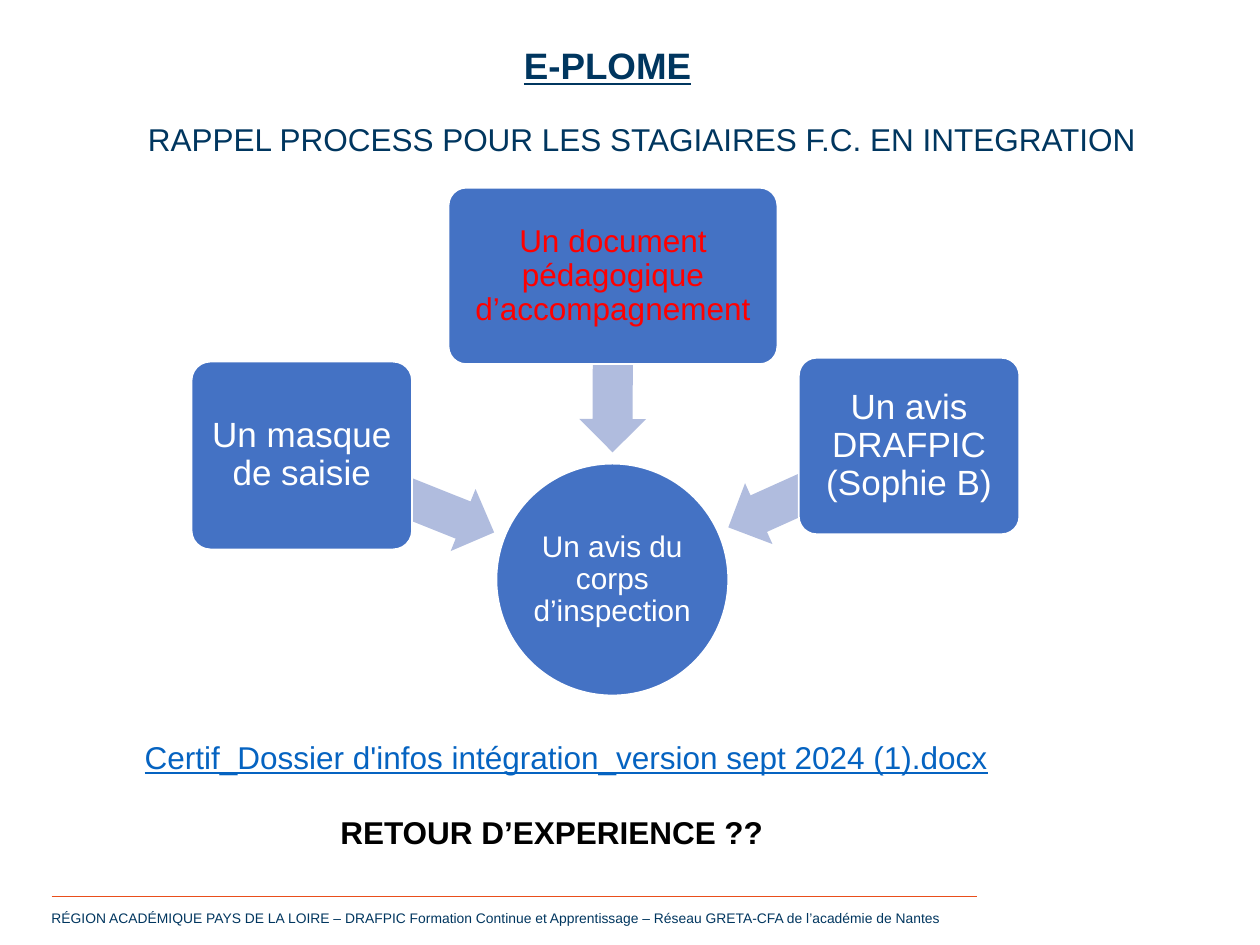
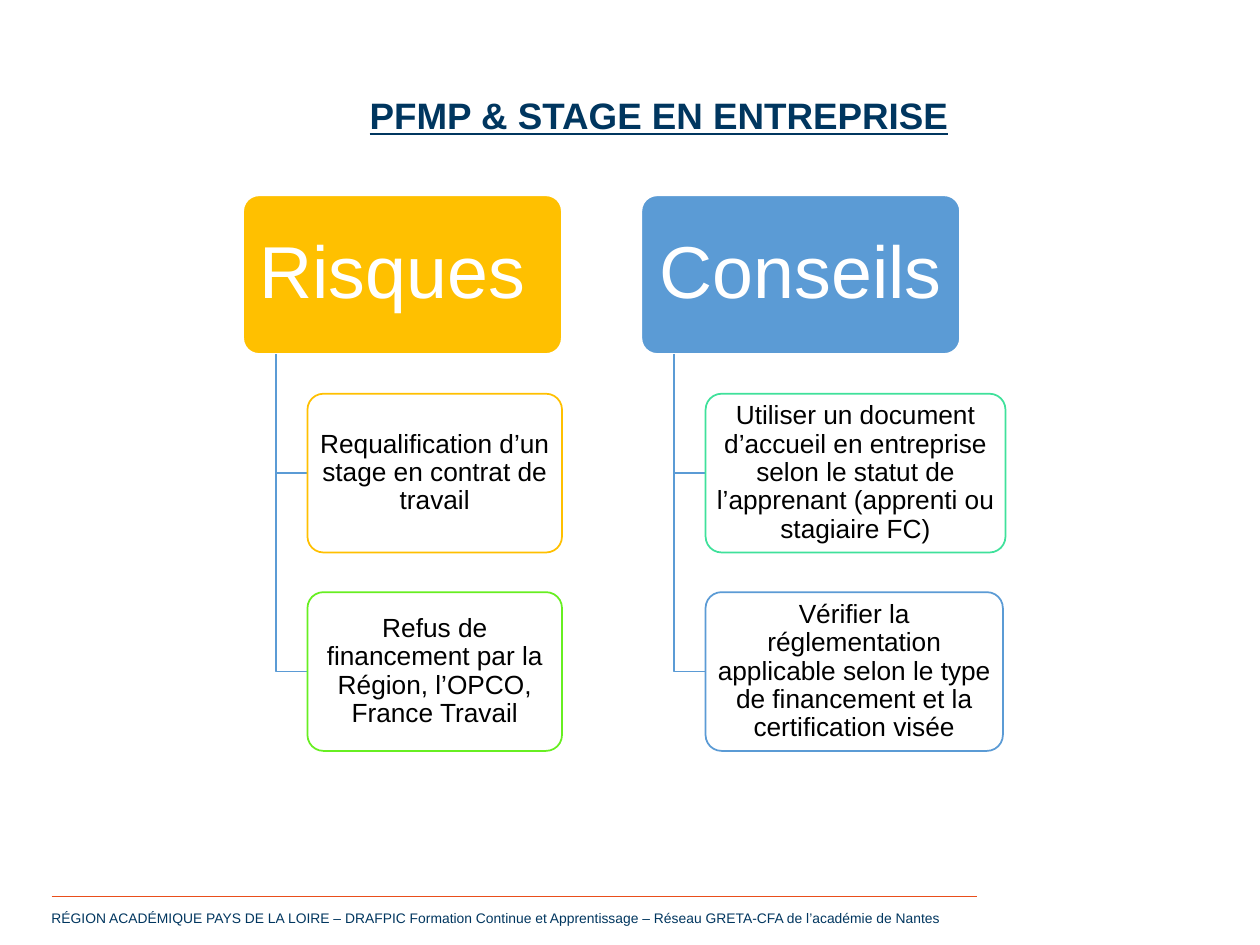
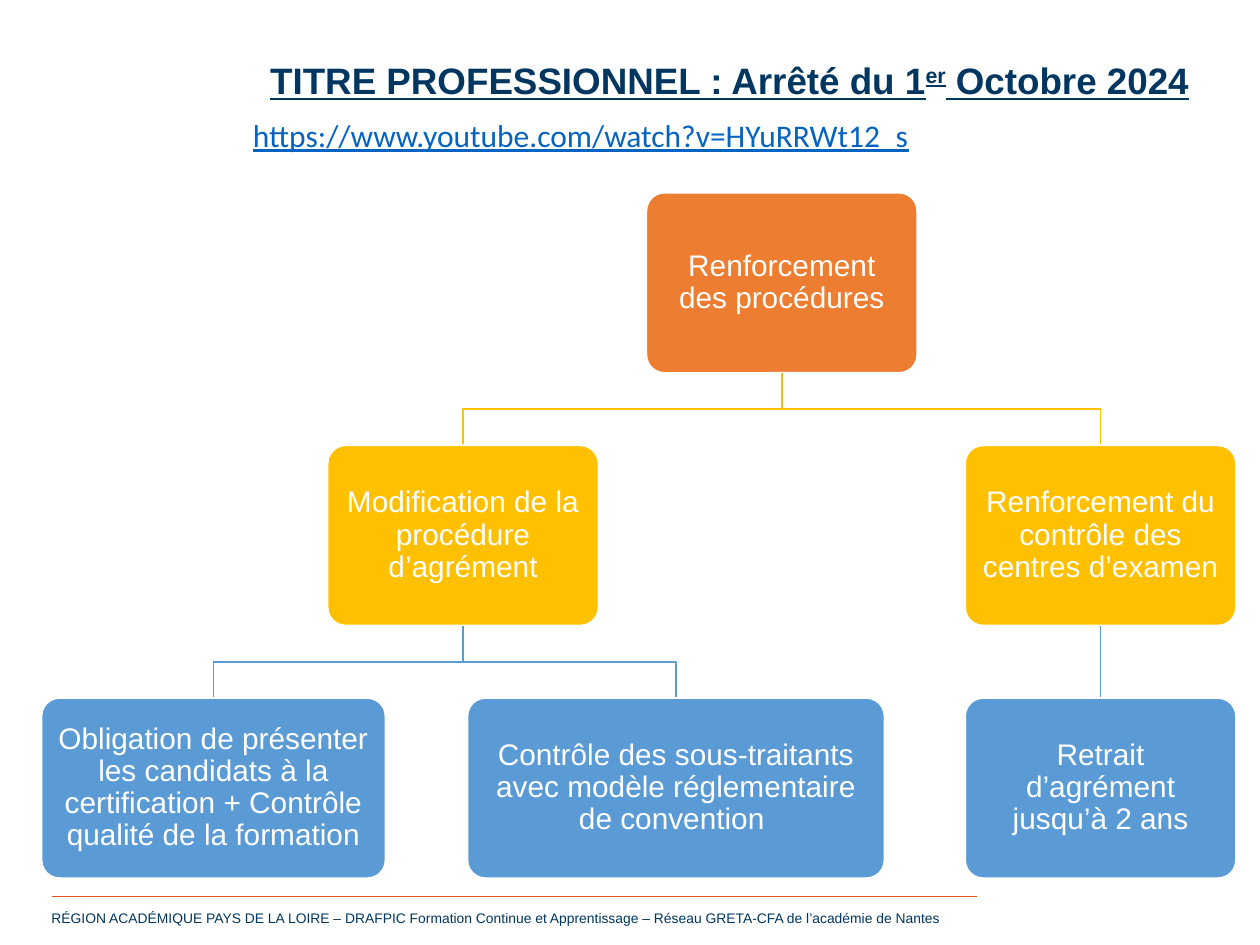
"""Build three slides on training procedures: E-PLOME, placements and professional titles."""
from dataclasses import dataclass
from math import atan2, degrees, hypot

from lxml.etree import SubElement
from pptx import Presentation
from pptx.dml.color import RGBColor
from pptx.enum.shapes import MSO_CONNECTOR, MSO_SHAPE
from pptx.enum.text import MSO_ANCHOR, PP_ALIGN
from pptx.oxml.ns import qn
from pptx.util import Inches, Pt

GRID_COLUMNS, GRID_ROWS = 100, 75
SLIDE_WIDTH, SLIDE_HEIGHT = Inches(10), Inches(7.5)


@dataclass(frozen=True)
class Theme:
    """Colours, fonts and type sizes shared by the slides."""
    navy: str = "00365F"
    footer_rule: str = "E94E1B"
    link: str = "0563C1"
    white: str = "FFFFFF"
    black: str = "000000"
    red: str = "FF0000"
    royal: str = "4472C4"
    pale: str = "B0BCDE"
    blue: str = "5B9BD5"
    gold: str = "FFC000"
    orange: str = "ED7D31"
    lime: str = "67EF21"
    mint: str = "3FE19B"
    font: str = "Arial"
    link_font: str = "Calibri"
    title: float = 21
    body: float = 18
    footer: float = 7.9
    node: float = 17
    process: float = 20
    heading: float = 42
    detail: float = 15


THEME = Theme()


@dataclass(frozen=True)
class Area:
    """A rectangle in grid columns and rows."""
    left: float
    top: float
    width: float
    height: float

    @property
    def centre(self):
        """Return the middle point of the rectangle."""
        return self.left + self.width / 2, self.top + self.height / 2

    @property
    def bottom(self):
        """Return the row of the lower edge."""
        return self.top + self.height

    def lengths(self):
        """Return left, top, width and height in slide units."""
        return (across(self.left), down(self.top),
                across(self.width), down(self.height))


@dataclass(frozen=True)
class Node:
    """A box of the procedure tree with the boxes below it."""
    text: str
    left: float
    width: float
    children: tuple = ()


def across(columns):
    """Convert grid columns to slide units."""
    return round(SLIDE_WIDTH * columns / GRID_COLUMNS)


def down(rows):
    """Convert grid rows to slide units."""
    return round(SLIDE_HEIGHT * rows / GRID_ROWS)


def colour(code):
    """Turn a hexadecimal code into a colour."""
    return RGBColor.from_string(code)


def style_run(run, size, code, bold=False, underline=False, font=THEME.font):
    """Set the character format of a run."""
    run.font.name, run.font.size = font, Pt(size)
    run.font.bold, run.font.underline = bold, underline
    run.font.color.rgb = colour(code)


def style_line(line, code, width=1):
    """Set the colour and width of an outline."""
    line.color.rgb = colour(code)
    line.width = Pt(width)


def add_text(slide, area, text, size, code, align=PP_ALIGN.LEFT, **style):
    """Add a one-paragraph text box and return its paragraph."""
    text_frame = slide.shapes.add_textbox(*area.lengths()).text_frame
    text_frame.word_wrap = True
    text_frame.text = text
    paragraph = text_frame.paragraphs[0]
    paragraph.alignment = align
    for run in paragraph.runs:
        style_run(run, size, code, **style)
    return paragraph


def add_title(slide, area, text, align=PP_ALIGN.CENTER):
    """Add the bold underlined slide title."""
    return add_text(slide, area, text, THEME.title, THEME.navy, align,
                    bold=True, underline=True)


def add_line(slide, start, end, code, width=1):
    """Add a straight connector without shadow."""
    connector = slide.shapes.add_connector(
        MSO_CONNECTOR.STRAIGHT, across(start[0]), down(start[1]),
        across(end[0]), down(end[1]))
    style_line(connector.line, code, width)
    SubElement(connector._element.spPr, qn("a:effectLst"))
    return connector


def add_slide(presentation):
    """Add a blank slide with the shared footer."""
    slide = presentation.slides.add_slide(presentation.slide_layouts[6])
    add_text(slide, Area(3.1, 71.7, 74.4, 2.3),
             "RÉGION ACADÉMIQUE PAYS DE LA LOIRE – DRAFPIC Formation Continue et "
             "Apprentissage – Réseau GRETA-CFA de l’académie de Nantes",
             THEME.footer, THEME.navy)
    add_line(slide, (4.1, 71.1), (77.5, 71.1), THEME.footer_rule, 0.25)
    return slide


def add_box(slide, area, text, size, fill, ink=THEME.white, border=THEME.white,
            insets=(0.04, 0.04), kind=MSO_SHAPE.ROUNDED_RECTANGLE):
    """Add a filled shape with centred text."""
    shape = slide.shapes.add_shape(kind, *area.lengths())
    shape.shadow.inherit = False
    if kind == MSO_SHAPE.ROUNDED_RECTANGLE:
        shape.adjustments[0] = 0.1
    shape.fill.solid()
    shape.fill.fore_color.rgb = colour(fill)
    style_line(shape.line, border)
    text_frame = shape.text_frame
    text_frame.word_wrap = True
    text_frame.vertical_anchor = MSO_ANCHOR.MIDDLE
    text_frame.margin_left = text_frame.margin_right = Inches(insets[0])
    text_frame.margin_top = text_frame.margin_bottom = Inches(insets[1])
    text_frame.text = text
    paragraph = text_frame.paragraphs[0]
    paragraph.alignment = PP_ALIGN.CENTER
    paragraph.line_spacing = 0.9
    style_run(paragraph.runs[0], size, ink)
    return shape


def add_bracket(slide, points, code):
    """Add an open angular line through grid points."""
    start, *others = [(across(column), down(row)) for column, row in points]
    builder = slide.shapes.build_freeform(*start)
    builder.add_line_segments(others, close=False)
    shape = builder.convert_to_shape()
    shape.shadow.inherit = False
    shape.fill.background()
    style_line(shape.line, code)


def add_arrow(slide, source, target, gap, thickness=5.3):
    """Add a block arrow from one centre towards another, stopping at a gap."""
    reach_x, reach_y = source[0] - target[0], source[1] - target[1]
    distance = hypot(reach_x, reach_y)
    length = distance - gap
    share = (gap + length / 2) / distance
    middle_x, middle_y = target[0] + reach_x * share, target[1] + reach_y * share
    area = Area(middle_x - length / 2, middle_y - thickness / 2, length, thickness)
    arrow = slide.shapes.add_shape(MSO_SHAPE.LEFT_ARROW, *area.lengths())
    arrow.shadow.inherit = False
    arrow.adjustments[0], arrow.adjustments[1] = 0.6, 0.5
    arrow.rotation = degrees(atan2(reach_y, reach_x)) % 360
    arrow.fill.solid()
    arrow.fill.fore_color.rgb = colour(THEME.pale)
    arrow.line.fill.background()


def build_process_slide(presentation):
    """Build the slide on the integration process."""
    slide = add_slide(presentation)
    add_title(slide, Area(40.6, 2.9, 55.4, 4.5), "E-PLOME", PP_ALIGN.LEFT)
    add_text(slide, Area(10.75, 9, 87.55, 4),
             "RAPPEL PROCESS POUR LES STAGIAIRES F.C. EN INTEGRATION",
             THEME.body, THEME.navy)
    goal = Area(39.4, 36.8, 18.4, 18.4)
    add_box(slide, goal, "Un avis du corps d’inspection", THEME.node, THEME.royal,
            insets=(0.01, 0.01), kind=MSO_SHAPE.OVAL)
    steps = (
        (Area(15.2, 28.7, 17.5, 14.9), "Un masque de saisie",
         THEME.process, THEME.white),
        (Area(35.6, 14.9, 26.1, 14), "Un document pédagogique d’accompagnement",
         THEME.body, THEME.red),
        (Area(63.4, 28.4, 17.5, 14), "Un avis DRAFPIC (Sophie B)",
         THEME.process, THEME.white),
    )
    for area, text, size, ink in steps:
        add_arrow(slide, area.centre, goal.centre, gap=10.1)
        add_box(slide, area, text, size, THEME.royal, ink)
    add_text(slide, Area(10.5, 58.1, 76.1, 4),
             "Certif_Dossier d'infos intégration_version sept 2024 (1).docx",
             THEME.body, THEME.link, underline=True)
    add_text(slide, Area(10.5, 64, 66.6, 4), "RETOUR D’EXPERIENCE ??",
             THEME.body, THEME.black, PP_ALIGN.CENTER, bold=True)


def add_topic(slide, left, heading, fill, details):
    """Add a heading box with its hanging detail boxes."""
    head = Area(left, 15.5, 25.3, 12.6)
    add_box(slide, head, heading, THEME.heading, fill, insets=(0.09, 0.06))
    trunk = left + 2.6
    for row, (text, width, border) in enumerate(details, start=1):
        area = Area(left + 5.1, head.top + row * head.height * 1.25,
                    width, head.height)
        middle = area.centre[1]
        add_bracket(slide, ((trunk, head.bottom), (trunk, middle),
                            (area.left, middle)), THEME.blue)
        add_box(slide, area, text, THEME.detail, THEME.white, THEME.black,
                border, (0.03, 0.02))


def build_placement_slide(presentation):
    """Build the slide on placement risks and advice."""
    slide = add_slide(presentation)
    add_title(slide, Area(16.5, 6.9, 71.6, 4.5), "PFMP & STAGE EN ENTREPRISE")
    add_topic(slide, 19.3, "Risques ", THEME.gold, (
        ("Requalification d’un stage en contrat de travail", 20.2, THEME.gold),
        ("Refus de financement par la Région, l’OPCO, France Travail",
         20.2, THEME.lime),
    ))
    add_topic(slide, 50.9, "Conseils", THEME.blue, (
        ("Utiliser un document d’accueil en entreprise selon le statut de "
         "l’apprenant (apprenti ou stagiaire FC)", 23.8, THEME.mint),
        ("Vérifier la réglementation applicable selon le type de financement "
         "et la certification visée", 23.6, THEME.blue),
    ))


def node_area(node, level):
    """Return the place of a tree box at a level."""
    return Area(node.left, 15.3 + 20.05 * level, node.width, 14.3)


def add_tree(slide, node, level=0):
    """Add a tree box, its links and its children."""
    fills = (THEME.orange, THEME.gold, THEME.blue)
    area = node_area(node, level)
    shape = add_box(slide, area, node.text, THEME.node, fills[level],
                    insets=(0.07, 0.07))
    for child in node.children:
        child_area = node_area(child, level + 1)
        start = area.centre[0], area.bottom
        end = child_area.centre[0], child_area.top
        if start[0] == end[0]:
            connector = add_line(slide, start, end, fills[level + 1])
            connector.begin_connect(shape, 2)
            connector.end_connect(add_tree(slide, child, level + 1), 0)
        else:
            turn = (start[1] + end[1]) / 2
            add_bracket(slide, (start, (start[0], turn), (end[0], turn), end),
                        fills[level + 1])
            add_tree(slide, child, level + 1)
    return shape


def build_title_slide(presentation):
    """Build the slide on the professional title decree."""
    slide = add_slide(presentation)
    paragraph = add_title(slide, Area(19.1, 4.1, 77.6, 4.5),
                          "TITRE PROFESSIONNEL : Arrêté du 1")
    for text, baseline in (("er", "30000"), (" Octobre 2024", "0")):
        run = paragraph.add_run()
        run.text = text
        style_run(run, THEME.title, THEME.navy, bold=True, underline=True)
        run._r.get_or_add_rPr().set("baseline", baseline)
    approval = Node("Modification de la procédure d’agrément", 26, 21.5, (
        Node("Obligation de présenter les candidats à la certification + "
             "Contrôle qualité de la formation", 3.3, 27.3),
        Node("Contrôle des sous-traitants avec modèle réglementaire de "
             "convention ", 37.1, 33.1),
    ))
    control = Node("Renforcement du contrôle des centres d’examen", 76.6, 21.5, (
        Node("Retrait d’agrément jusqu’à 2 ans", 76.6, 21.5),
    ))
    add_tree(slide, Node("Renforcement des procédures", 51.3, 21.5,
                         (approval, control)))
    add_text(slide, Area(19.1, 8.7, 57.7, 4),
             "https://www.youtube.com/watch?v=HYuRRWt12_s",
             THEME.body, THEME.link, underline=True, font=THEME.link_font)


def main():
    """Build and save the presentation."""
    presentation = Presentation()
    presentation.slide_width, presentation.slide_height = SLIDE_WIDTH, SLIDE_HEIGHT
    build_process_slide(presentation)
    build_placement_slide(presentation)
    build_title_slide(presentation)
    presentation.save("out.pptx")


if __name__ == "__main__":
    main()
